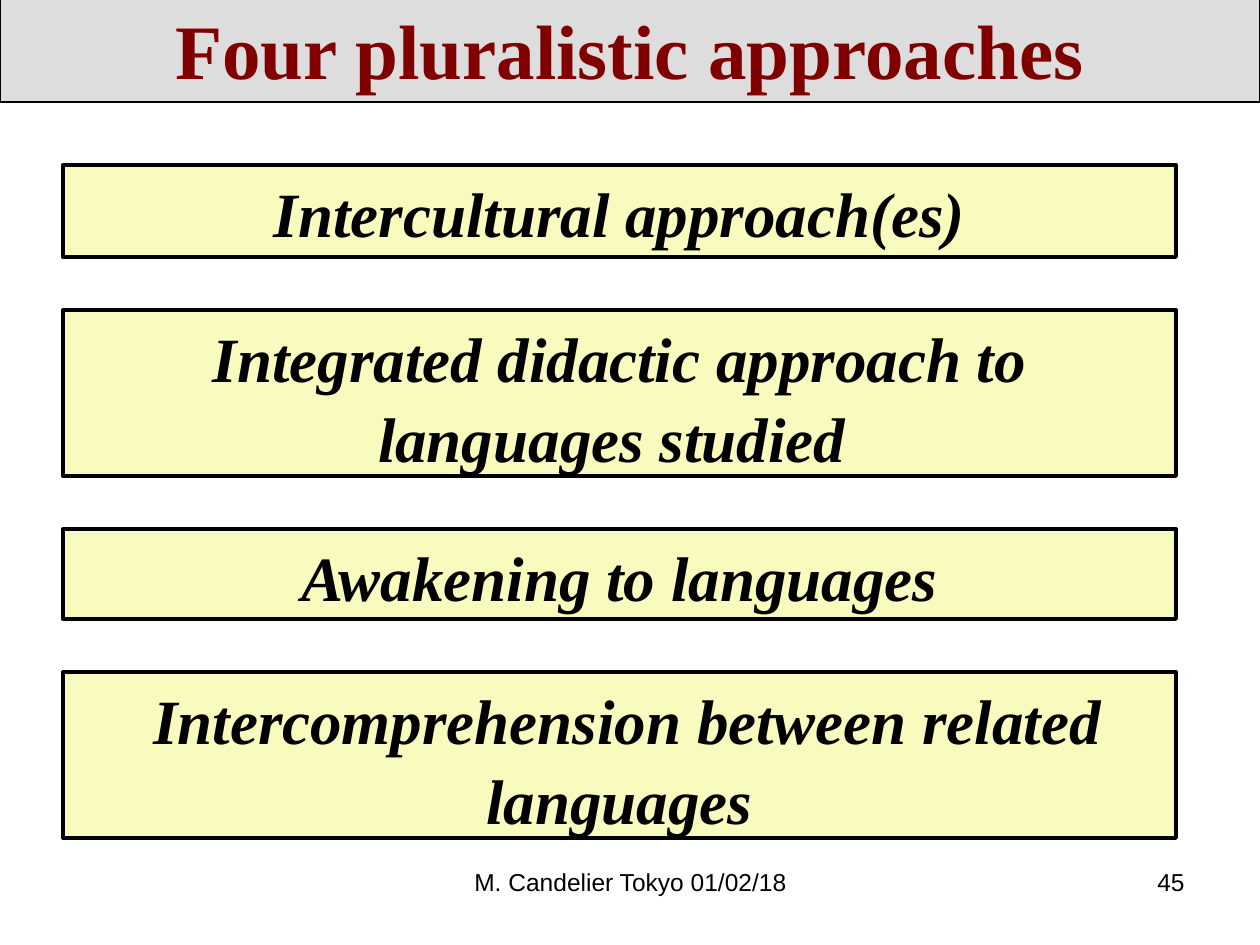
from pptx import Presentation
from pptx.dml.color import RGBColor
from pptx.enum.shapes import MSO_SHAPE
from pptx.enum.text import MSO_ANCHOR, PP_ALIGN
from pptx.util import Pt

RECT = MSO_SHAPE.RECTANGLE
TOP, MIDDLE = MSO_ANCHOR.TOP, MSO_ANCHOR.MIDDLE
CENTER, RIGHT = PP_ALIGN.CENTER, PP_ALIGN.RIGHT
SERIF, SANS = "Times New Roman", "Arial"

# Content: each approach with its box height
TITLE = "Four pluralistic approaches"
ITEMS = [
    ("Intercultural approach(es)", 92),
    ("Integrated didactic approach to languages studied ", 166),
    ("Awakening to languages", 90),
    (" Intercomprehension between related languages", 166),
]
FOOTER = "M. Candelier Tokyo 01/02/18"
NUMBER = "45"

# Layout in px, 126 to the inch
LEFT, WIDTH, START, GAP = 63, 1113, 165, 53


def px(n):
    return round(n * 914400 / 126)


def color(code):
    return RGBColor.from_string(code)


def write(shape, text, size=36, font=SERIF, ink="000000", bold=False,
          italic=False, align=CENTER, anchor=TOP, space=None):
    frame = shape.text_frame
    frame.word_wrap = True
    frame.vertical_anchor = anchor
    para = frame.paragraphs[0]
    para.alignment = align
    para.line_spacing = space
    run = para.add_run()
    run.text = text
    run.font.name = font
    run.font.size = Pt(size)
    run.font.bold = bold
    run.font.italic = italic
    run.font.color.rgb = color(ink)


def box(slide, area, fill, weight):
    shape = slide.shapes.add_shape(RECT, *map(px, area))
    shape.shadow.inherit = False
    shape.fill.solid()
    shape.fill.fore_color.rgb = color(fill)
    shape.line.color.rgb = color("000000")
    shape.line.width = Pt(weight)
    return shape


def main():
    deck = Presentation()
    deck.slide_width, deck.slide_height = px(1260), px(945)
    slide = deck.slides.add_slide(deck.slide_layouts[6])

    # Title band
    band = box(slide, (0, -4, 1260, 106), "DDDDDD", 1.5)
    write(band, TITLE, size=44, ink="800000", bold=True, anchor=MIDDLE)

    # Stack of approaches with equal gaps
    top = START
    for text, height in ITEMS:
        card = box(slide, (LEFT, top, WIDTH, height), "F8FABE", 2.25)
        write(card, text, bold=True, italic=True, space=1.05)
        top += height + GAP

    # Footer and slide number
    for text, left, width, align in [(FOOTER, 431, 399, CENTER),
                                     (NUMBER, 903, 294, RIGHT)]:
        note = slide.shapes.add_textbox(*map(px, (left, 861, width, 66)))
        write(note, text, size=14, font=SANS, align=align)

    deck.save("out.pptx")


if __name__ == "__main__":
    main()
